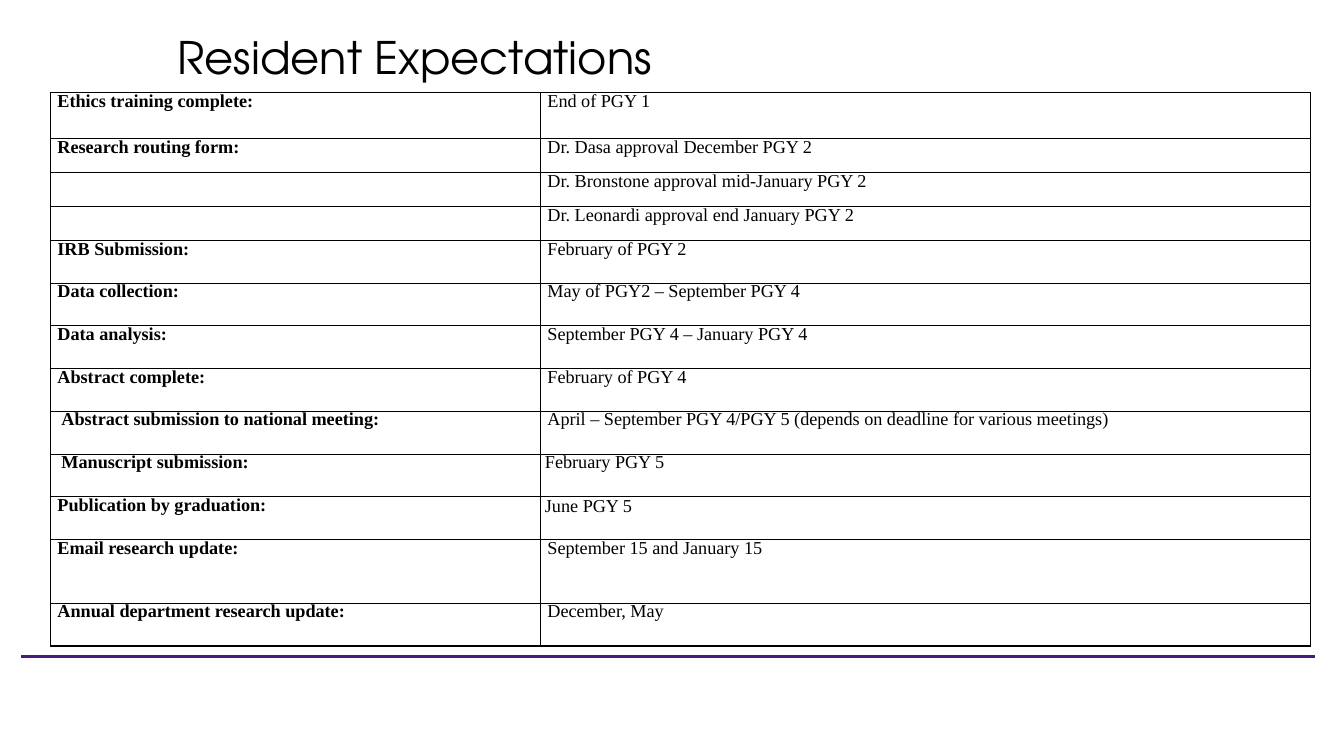
from lxml import etree
from pptx import Presentation
from pptx.dml.color import RGBColor
from pptx.enum import shapes, text
from pptx.oxml import ns
from pptx.util import Pt

HEADING = "Resident Expectations"
SHORT, NORMAL, FIRST, TALL = 24.2, 30.55, 33.1, 45.5
INDENT, WIDE_INDENT, SLIM_INDENT = 5.04, 7.92, 3.25
EXPECTATIONS = [
    ("Ethics training complete:", "End of PGY 1", FIRST),
    ("Research routing form:", "Dr. Dasa approval December PGY 2", SHORT),
    ("", "Dr. Bronstone approval mid-January PGY 2", SHORT),
    ("", "Dr. Leonardi approval end January PGY 2", SHORT),
    ("IRB Submission:", "February of PGY 2", NORMAL),
    ("Data collection:", "May of PGY2 – September PGY 4", NORMAL),
    ("Data analysis:", "September PGY 4 – January PGY 4", NORMAL),
    ("Abstract complete:", "February of PGY 4", NORMAL),
    ("Abstract submission to national meeting:",
     "April – September PGY 4/PGY 5 (depends on deadline for various meetings)", NORMAL),
    ("Manuscript submission:", "February PGY 5", NORMAL),
    ("Publication by graduation:", "June PGY 5", NORMAL),
    ("Email research update:", "September 15 and January 15", TALL),
    ("Annual department research update:", "December, May", NORMAL),
]
INDENTS = {
    "Abstract submission to national meeting:": WIDE_INDENT,
    "Manuscript submission:": WIDE_INDENT,
    "February PGY 5": SLIM_INDENT,
    "June PGY 5": SLIM_INDENT,
}
LINE_SPACINGS = {"Abstract complete:": Pt(13.3), "February of PGY 4": Pt(13.3), "June PGY 5": 1.0}
COLUMN_WIDTHS = (350, 550)
TABLE_LEFT, TABLE_TOP = 36, 66.1


def color(hex_string):
    return RGBColor.from_string(hex_string)


def style_font(font, name, size, bold=False):
    font.name, font.size, font.bold = name, Pt(size), bold
    font.color.rgb = color("000000")


def add_borders(cell):
    properties = cell._tc.get_or_add_tcPr()
    for side in ("lnL", "lnR", "lnT", "lnB"):
        border = etree.SubElement(properties, ns.qn(f"a:{side}"), w=str(Pt(1)))
        fill = etree.SubElement(border, ns.qn("a:solidFill"))
        etree.SubElement(fill, ns.qn("a:srgbClr"), val="000000")


def fill_cell(cell, wording, bold):
    cell.margin_left = cell.margin_right = cell.margin_top = cell.margin_bottom = 0
    add_borders(cell)
    cell.fill.background()
    if not wording:
        return
    paragraph = cell.text_frame.paragraphs[0]
    paragraph.text = wording
    paragraph.line_spacing = LINE_SPACINGS.get(wording, Pt(13.2))
    paragraph._p.get_or_add_pPr().set("marL", str(Pt(INDENTS.get(wording, INDENT))))
    style_font(paragraph.runs[0].font, "Times New Roman", 13, bold)


def add_heading(slide):
    heading = slide.shapes.title
    heading.left, heading.top, heading.width, heading.height = Pt(119.5), Pt(21.6), Pt(720), Pt(80.6)
    frame = heading.text_frame
    frame.text = HEADING
    frame.word_wrap = True
    frame.auto_size = text.MSO_AUTO_SIZE.NONE
    frame.vertical_anchor = text.MSO_ANCHOR.TOP
    paragraph = frame.paragraphs[0]
    paragraph.alignment = text.PP_ALIGN.LEFT
    paragraph.line_spacing = 0.9
    style_font(paragraph.runs[0].font, "TeX Gyre Adventor", 32)


def add_expectations(slide):
    table = slide.shapes.add_table(
        len(EXPECTATIONS), len(COLUMN_WIDTHS), Pt(TABLE_LEFT), Pt(TABLE_TOP),
        Pt(sum(COLUMN_WIDTHS)), Pt(sum(height for _, _, height in EXPECTATIONS))).table
    table.first_row = table.horz_banding = False
    for column, width in zip(table.columns, COLUMN_WIDTHS):
        column.width = Pt(width)
    for row, (milestone, deadline, height) in zip(table.rows, EXPECTATIONS):
        row.height = Pt(height)
        fill_cell(row.cells[0], milestone, True)
        fill_cell(row.cells[1], deadline, False)


def add_footer_rule(slide):
    rule = slide.shapes.add_connector(
        shapes.MSO_CONNECTOR.STRAIGHT, Pt(15.1), Pt(468.7), Pt(939.6), Pt(468.7))
    rule.line.color.rgb = color("461D7C")
    rule.line.width = Pt(2.25)
    etree.SubElement(rule._element.spPr, ns.qn("a:effectLst"))


def main():
    deck = Presentation()
    deck.slide_width, deck.slide_height = Pt(960), Pt(540)
    slide = deck.slides.add_slide(deck.slide_layouts[5])
    add_footer_rule(slide)
    add_expectations(slide)
    add_heading(slide)
    deck.save("out.pptx")


if __name__ == "__main__":
    main()
